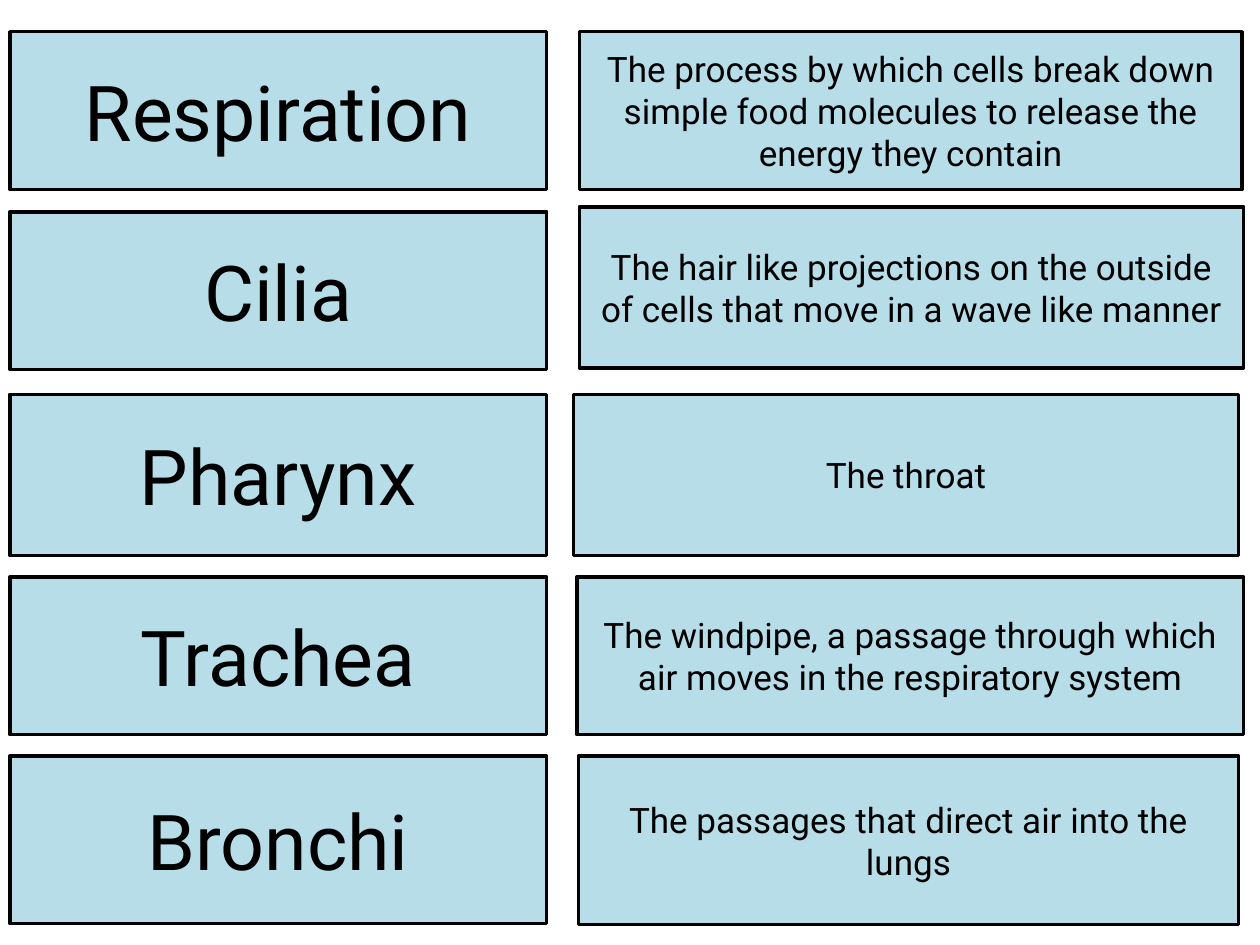
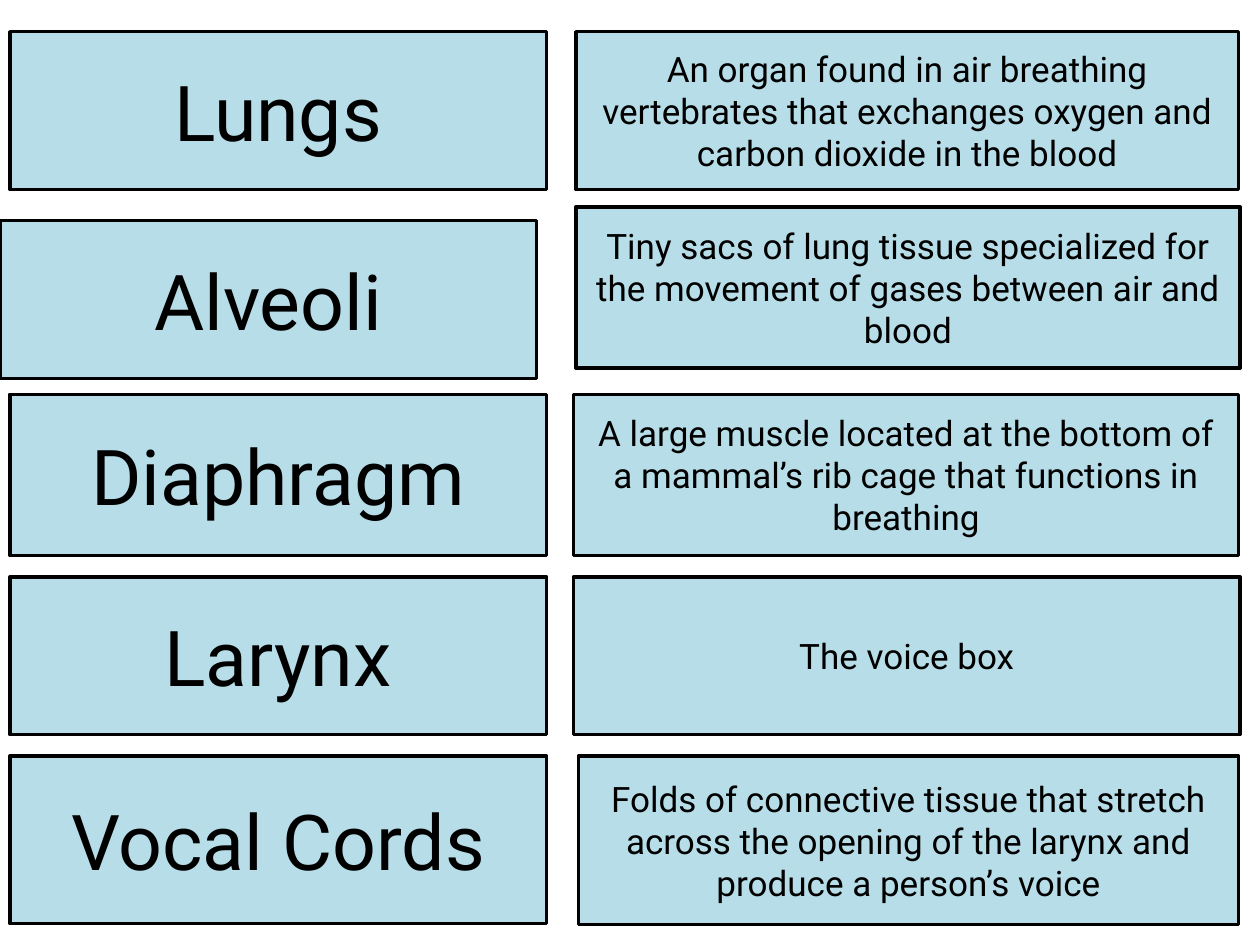
from pptx import Presentation
from pptx.dml.color import RGBColor
from pptx.enum.shapes import MSO_SHAPE
from pptx.enum.text import MSO_ANCHOR, PP_ALIGN
from pptx.util import Cm, Pt

PROCESS = MSO_SHAPE.FLOWCHART_PROCESS
MIDDLE = MSO_ANCHOR.MIDDLE
CENTER = PP_ALIGN.CENTER

BLUE = RGBColor(0xB7, 0xDE, 0xE8)
BLACK = RGBColor(0, 0, 0)
WHITE = RGBColor(0xFF, 0xFF, 0xFF)

FONT = {"name": "Roboto", "bold": False}
TERM = {**FONT, "size": Pt(44)}
MEANING = {**FONT, "size": Pt(20)}
FRAME = {"word_wrap": True, "vertical_anchor": MIDDLE}

BLANK = 6
TERM_LEFT, TERM_WIDTH = 0.2, 10.82

# Each row: term top and height, then meaning top, height and width (cm)
ROWS = [
    (0.64, 3.18, 0.64, 3.18, 13.36),
    (4.27, 3.18, 4.17, 3.25, 13.39),
    (7.95, 3.25, 7.95, 3.25, 13.41),
    (11.63, 3.18, 11.63, 3.18, 13.44),
    (15.24, 3.38, 15.24, 3.4, 13.31),
]

# Each card: term, meaning, left edge of the meaning (cm)
BREATHING = [
    ("Respiration", "The process by which cells break down simple food "
     "molecules to release the energy they contain", 11.68),
    ("Cilia", "The hair like projections on the outside of cells that move "
     "in a wave like manner", 11.68),
    ("Pharynx", "The throat", 11.56),
    ("Trachea", "The windpipe, a passage through which air moves in the "
     "respiratory system", 11.63),
    ("Bronchi", "The passages that direct air into the lungs", 11.66),
]
ORGANS = [
    ("Lungs", "An organ found in air breathing vertebrates that exchanges "
     "oxygen and carbon dioxide in the blood", 11.61),
    ("Alveoli", "Tiny sacs of lung tissue specialized for the movement of "
     "gases between air and blood", 11.61),
    ("Diaphragm", "A large muscle located at the bottom of a mammal’s rib "
     "cage that functions in breathing", 11.56),
    ("Larynx", "The voice box", 11.56),
    ("Vocal Cords", "Folds of connective tissue that stretch across the "
     "opening of the larynx and produce a person’s voice", 11.66),
]
# Terms that stand off the column: left and top (cm)
MOVED = {"Alveoli": (0, 4.45)}


def apply(target, values):
    for key, value in values.items():
        setattr(target, key, value)


def add_card(slide, box, text, style):
    """Draw one bordered card in box (left, top, width, height in cm)."""
    card = slide.shapes.add_shape(PROCESS, *map(Cm, box))
    card.shadow.inherit = False
    card.fill.solid()
    card.fill.fore_color.rgb = BLUE
    card.line.color.rgb = BLACK
    card.line.width = Pt(2)
    frame = card.text_frame
    apply(frame, FRAME)
    line = frame.paragraphs[0]
    line.alignment = CENTER
    run = line.add_run()
    run.text = text
    apply(run.font, style)
    run.font.color.rgb = BLACK


def add_pair(slide, row, card):
    """Place a term and its meaning side by side in one row."""
    term, meaning, left = card
    term_top, term_height, top, height, width = row
    spot = MOVED.get(term, (TERM_LEFT, term_top))
    add_card(slide, (*spot, TERM_WIDTH, term_height), term, TERM)
    add_card(slide, (left, top, width, height), meaning, MEANING)


def add_sheet(deck, cards):
    slide = deck.slides.add_slide(deck.slide_layouts[BLANK])
    for row, card in zip(ROWS, cards):
        add_pair(slide, row, card)


def main():
    deck = Presentation()
    apply(deck, {"slide_width": Cm(25.4), "slide_height": Cm(19.05)})
    back = deck.slide_master.background.fill
    back.solid()
    back.fore_color.rgb = WHITE
    for cards in (BREATHING, ORGANS):
        add_sheet(deck, cards)
    deck.save("out.pptx")


if __name__ == "__main__":
    main()
